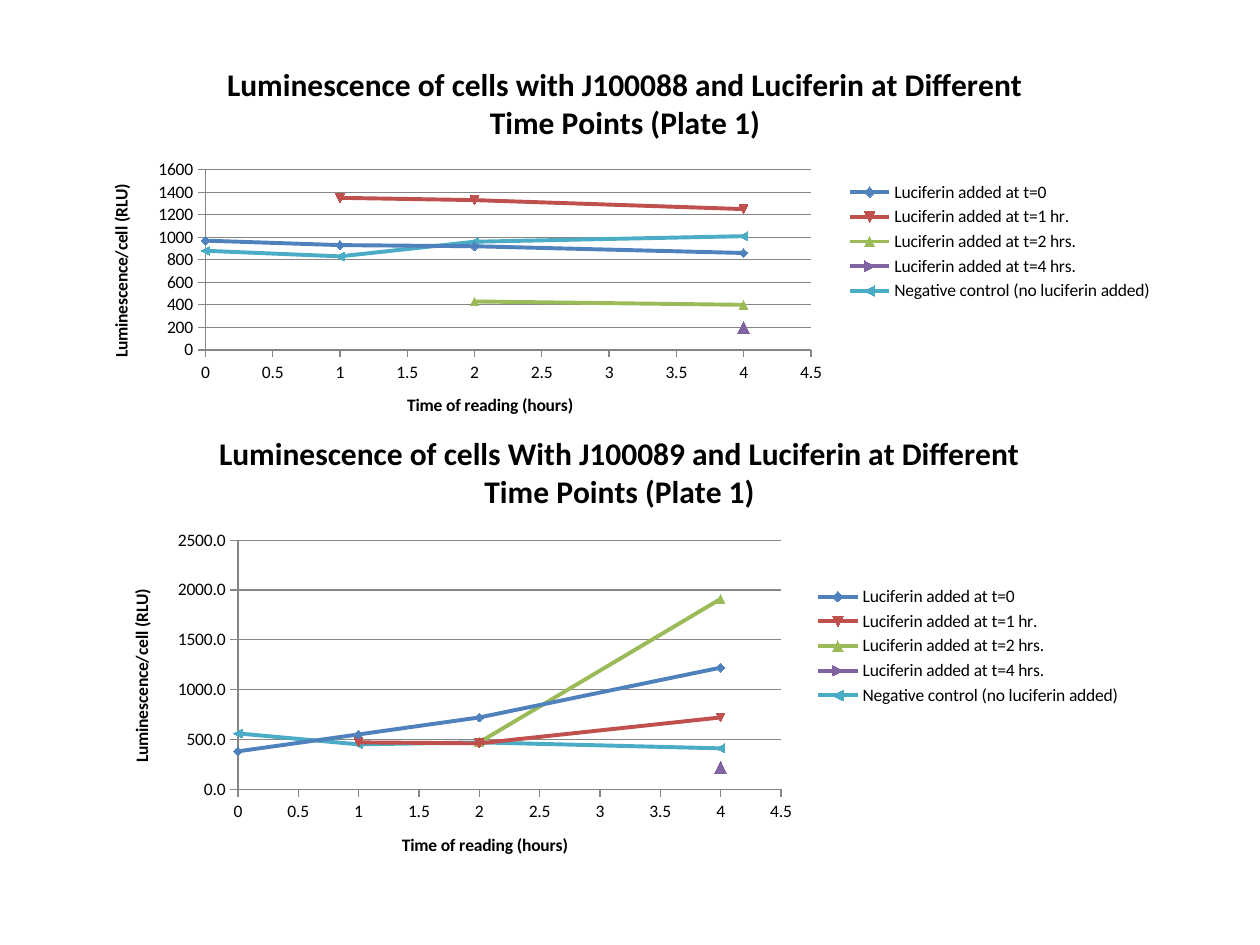
"""Build a slide with two scatter charts of luminescence over time."""
from dataclasses import dataclass
from typing import Optional

from lxml import etree
from pptx import Presentation
from pptx import util as u
from pptx.chart.data import XyChartData
from pptx.dml.color import RGBColor
from pptx.enum import chart as ch
from pptx.oxml import parse_xml
from pptx.oxml.ns import nsdecls, qn

FONT = "Calibri"
HOURS = (0, 1, 2, 4)
SERIES = (
    ("Luciferin added at t=0", "4F81BD"),
    ("Luciferin added at t=1 hr.", "C0504D"),
    ("Luciferin added at t=2 hrs.", "9BBB59"),
    ("Luciferin added at t=4 hrs.", "8064A2"),
    ("Negative control (no luciferin added)", "4BACC6"),
)


@dataclass
class Plate:
    """One chart; its plot area is in percent of the chart."""
    title: str
    box: tuple[float, float, float, float]
    plot: tuple[float, float, float, float]
    top: float
    step: float
    number_format: str
    hours: tuple[Optional[float], ...]
    readings: tuple[tuple[Optional[float], ...], ...]


PLATES = (
    Plate(
        "Luminescence of cells with J100088 and Luciferin at Different Time Points (Plate 1)",
        (1.7, 0.85, 21.8, 8.04), (11.2, 32, 56, 45.2), 1600, 200, "General", (None, *HOURS),
        ((0, 970, 930, 920, 860), (0, None, 1350, 1330, 1250), (0, None, None, 430, 400),
         (0, None, None, None, 200), (0, 880, 830, 960, 1010)),
    ),
    Plate(
        "Luminescence of cells With J100089 and Luciferin at Different Time Points (Plate 1)",
        (2.12, 8.26, 20.74, 9.53), (12.9, 27.6, 52.8, 52.7), 2500, 500, "0.0", HOURS,
        ((380, 550, 720, 1220), (None, 470, 460, 720), (None, None, 470, 1910),
         (None, None, None, 220), (560, 450, 470, 410)),
    ),
)


def rgb(color: str) -> RGBColor:
    """Turn a hex string into a colour."""
    return RGBColor.from_string(color)


def set_text(tf, text: str, *, size: float, bold: bool = True, color: str = "000000") -> None:
    """Write one formatted run into a text frame."""
    r = tf.paragraphs[0].add_run()
    r.text = text
    r.font.name, r.font.size, r.font.bold = FONT, u.Pt(size), bold
    r.font.color.rgb = rgb(color)


def set_line(line, color: str, width: float) -> None:
    """Give a line its colour and width."""
    line.color.rgb = rgb(color)
    line.width = u.Pt(width)


def format_axis(axis, title: str, top: float, step: float, number_format: str) -> None:
    """Set the title, scale and ticks of an axis."""
    set_text(axis.axis_title.text_frame, title, size=10)
    axis.minimum_scale, axis.maximum_scale, axis.major_unit = 0, top, step
    axis.major_tick_mark = ch.XL_TICK_MARK.OUTSIDE
    axis.minor_tick_mark = ch.XL_TICK_MARK.NONE
    axis.tick_labels.number_format = number_format
    axis.tick_labels.number_format_is_linked = False
    set_line(axis.format.line, "868686", 0.75)


def place_plot(chart, plot: tuple[float, float, float, float]) -> None:
    """Fix the inner plot area and leave the chart background clear."""
    area = chart.plots[0]._element.getparent()
    for old in area.findall(qn("c:layout")):
        area.remove(old)
    layout = etree.Element(qn("c:layout"))
    manual = etree.SubElement(layout, qn("c:manualLayout"))
    settings = [("layoutTarget", "inner"), ("xMode", "edge"), ("yMode", "edge")]
    for name, value in settings + [(k, v / 100) for k, v in zip("xywh", plot)]:
        etree.SubElement(manual, qn(f"c:{name}")).set("val", str(value))
    area.insert(0, layout)
    clear = parse_xml(f'<c:spPr {nsdecls("c", "a")}><a:noFill/><a:ln><a:noFill/></a:ln></c:spPr>')
    chart._chartSpace.find(qn("c:txPr")).addprevious(clear)


def drop_missing(chart) -> None:
    """Leave a gap wherever a reading or an hour is missing."""
    for pt in list(chart._chartSpace.iter(qn("c:pt"))):
        if pt.findtext(qn("c:v")) in ("None", "", None):
            pt.getparent().remove(pt)


def add_plate(s, plate: Plate) -> None:
    """Draw the chart of one plate."""
    data = XyChartData()
    for (name, _), values in zip(SERIES, plate.readings):
        series = data.add_series(name)
        for hour, value in zip(plate.hours, values):
            series.add_data_point(hour, value)
    box = [u.Cm(v) for v in plate.box]
    chart = s.shapes.add_chart(ch.XL_CHART_TYPE.XY_SCATTER_LINES, *box, data).chart
    drop_missing(chart)
    chart.font.name, chart.font.size = FONT, u.Pt(10)
    chart.font.color.rgb = rgb("000000")
    set_text(chart.chart_title.text_frame, plate.title, size=18)
    chart.chart_title.include_text_in_layout = False
    chart.has_legend = True
    chart.legend.position = ch.XL_LEGEND_POSITION.RIGHT
    chart.legend.include_in_layout = False

    x_axis, y_axis = chart.category_axis, chart.value_axis
    format_axis(x_axis, "Time of reading (hours)", 4.5, 0.5, "General")
    format_axis(y_axis, "Luminescence/cell (RLU)", plate.top, plate.step, plate.number_format)
    x_axis.has_major_gridlines = False
    set_line(y_axis.major_gridlines.format.line, "868686", 0.75)

    chart.plots[0].vary_by_categories = False
    for series, (_, color), values in zip(chart.plots[0].series, SERIES, plate.readings):
        set_line(series.format.line, color, 2.25)
        series.smooth = False
        if values.count(None) == len(HOURS) - 1:
            marker = series.points[len(values) - 1].marker
            marker.style, marker.size = ch.XL_MARKER_STYLE.TRIANGLE, 7
            marker.format.fill.solid()
            marker.format.fill.fore_color.rgb = rgb(color)
    place_plot(chart, plate.plot)


def main() -> None:
    """Build and save the slide."""
    prs = Presentation()
    prs.slide_width, prs.slide_height = u.Cm(25.4), u.Cm(19.05)
    s = prs.slides.add_slide(prs.slide_layouts[6])
    for plate in PLATES:
        add_plate(s, plate)
    prs.save("out.pptx")


if __name__ == "__main__":
    main()
